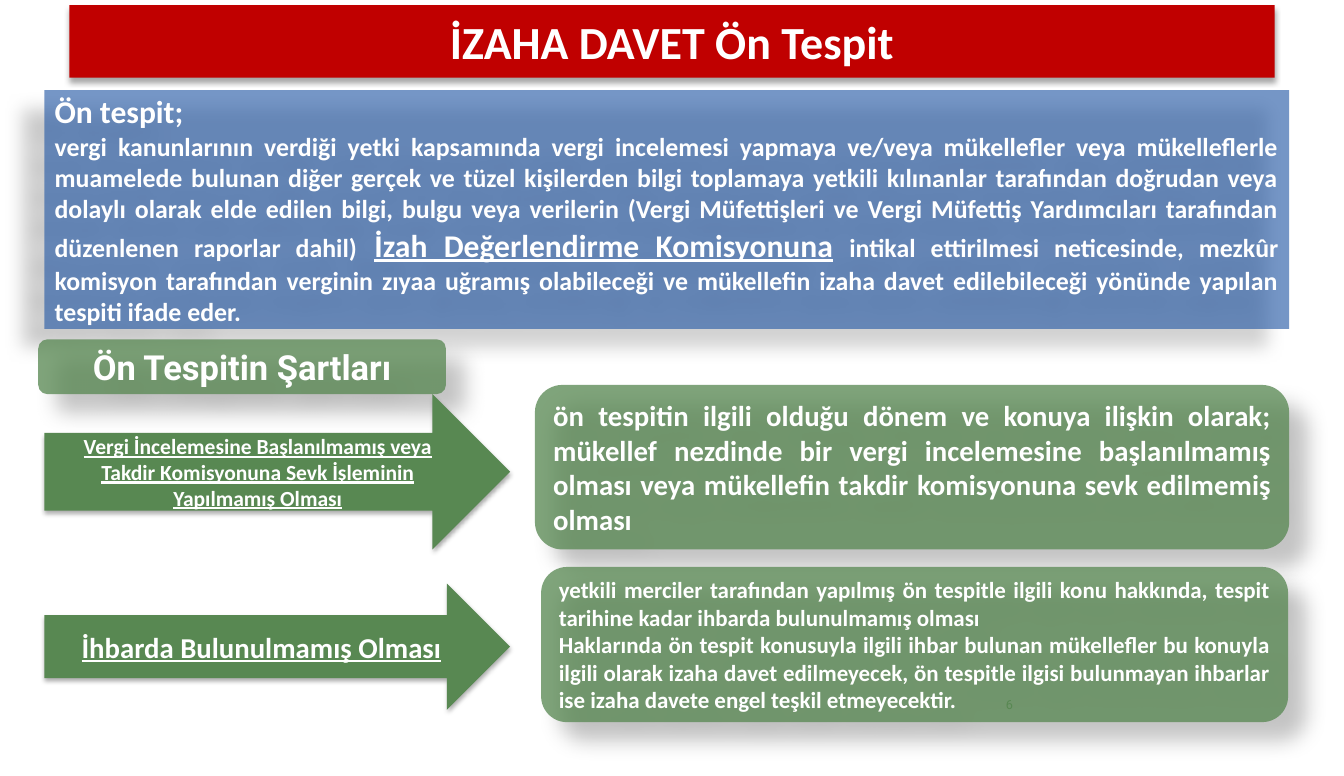
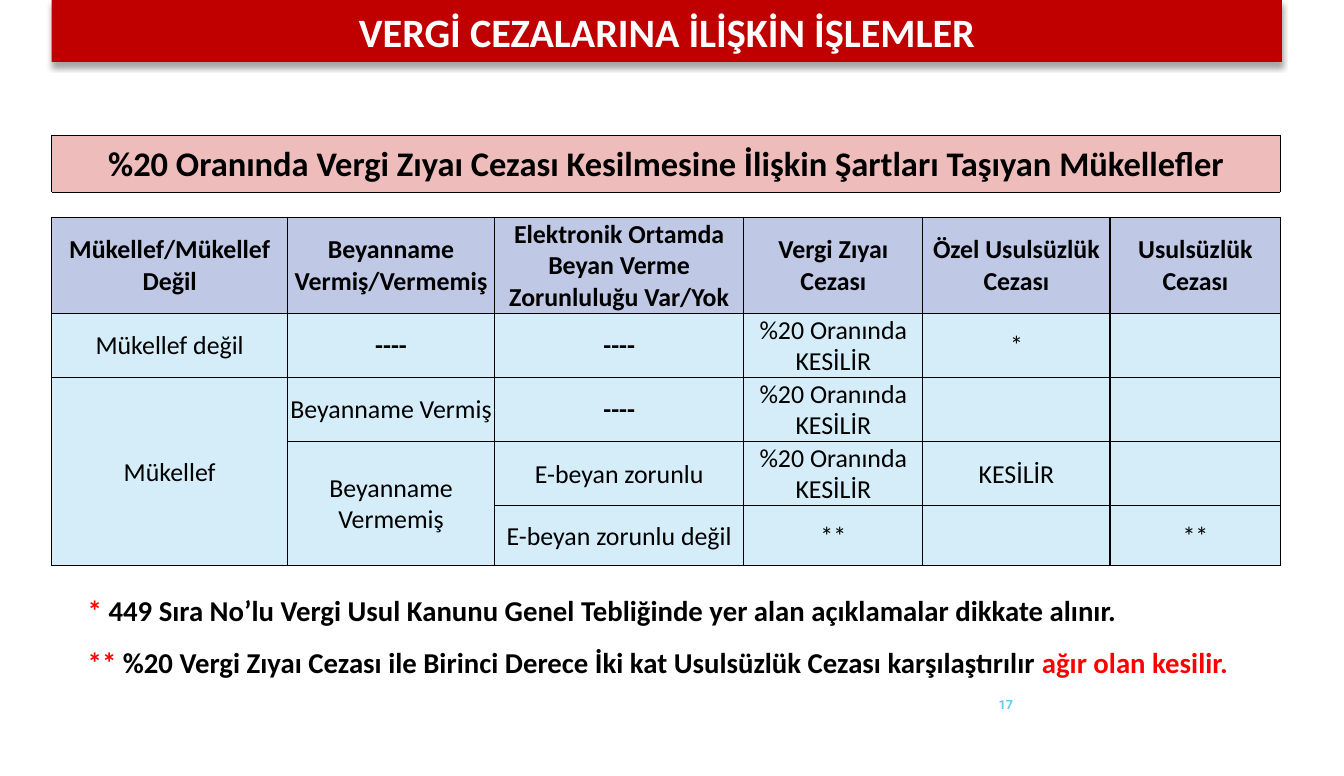
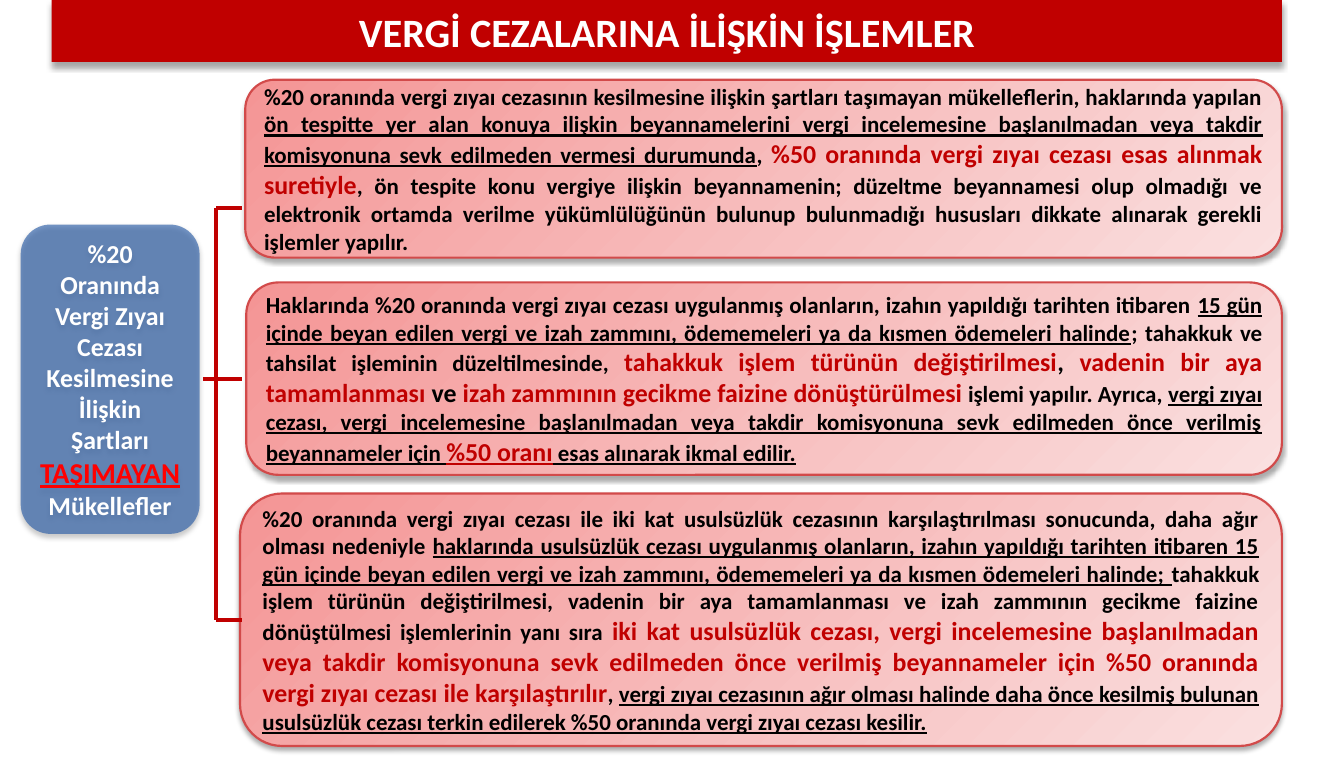
from dataclasses import dataclass

from lxml.etree import SubElement
from pptx import Presentation
from pptx.dml.color import RGBColor
from pptx.enum.shapes import MSO_CONNECTOR, MSO_SHAPE
from pptx.enum.text import MSO_ANCHOR, PP_ALIGN
from pptx.oxml import parse_xml
from pptx.oxml.ns import nsdecls, qn
from pptx.util import Inches, Pt


@dataclass(frozen=True)
class Theme:
    font: str = "Calibri"
    alternate_font: str = "Roboto"
    white: str = "FFFFFF"
    black: str = "000000"
    band: str = "C00000"
    alert: str = "FF0000"
    blue: str = "265AA6"
    green: str = "588852"
    sky: str = "5FCBEF"
    pink_dark: str = "F49595"
    pink_light: str = "FAE0E0"
    pink_line: str = "D24A4A"
    caption_fill: str = "EFBCBC"
    header_fill: str = "BFC8E4"
    body_fill: str = "D4EDF9"
    title: int = 32
    subtitle: int = 28
    heading: int = 24
    lead: int = 22
    large: int = 20
    body: int = 18
    small: int = 16
    label: int = 15
    tiny: int = 8
    number: float = 8.8


THEME = Theme()
CELL = 0.1  # one grid column or row, in inches
COLUMNS, ROWS = 129.9, 75

# Shadows: opacity %, blur pt, distance pt, direction in degrees
BAND_SHADOW = (35, 4, 3, 90)
SOFT_SHADOW = (32, 3.5, 2.2, 90)
BLUE_SHADOW = (28, 11.8, 19.7, 141)
GREEN_SHADOW = (30, 15, 18, 45)

UNDERLINED = dict(underline=True)
STRONG = dict(size=THEME.body, color=THEME.band)
RED = dict(color=THEME.alert)

# Content: a paragraph is a string or a list of strings and (string, format) pairs
PENALTY_TITLE = "VERGİ CEZALARINA İLİŞKİN İŞLEMLER"

DEFINITION = [
    [("Ön tespit;", dict(size=THEME.lead))],
    [
        "vergi kanunlarının verdiği yetki kapsamında vergi incelemesi yapmaya ve/veya mükellefler veya "
        "mükelleflerle muamelede bulunan diğer gerçek ve tüzel kişilerden bilgi toplamaya yetkili kılınanlar "
        "tarafından doğrudan veya dolaylı olarak elde edilen bilgi, bulgu veya verilerin (Vergi Müfettişleri ve "
        "Vergi Müfettiş Yardımcıları tarafından düzenlenen raporlar dahil)",
        (" ", dict(size=THEME.heading)),
        ("İzah Değerlendirme Komisyonuna", dict(size=THEME.lead, underline=True)),
        (" ", dict(size=THEME.lead)),
        "intikal ettirilmesi neticesinde, mezkûr komisyon tarafından verginin zıyaa uğramış olabileceği ve "
        "mükellefin izaha davet edilebileceği yönünde yapılan tespiti ifade eder.",
    ],
]

# Each condition: arrow place, arrow size, arrow text, box place, box size, box text
CONDITIONS = [
    ((4.3, 38.1, 45, 15), THEME.label,
     "Vergi İncelemesine Başlanılmamış veya Takdir Komisyonuna Sevk İşleminin Yapılmamış Olması",
     (51.7, 37.2, 72.9, 15.9), THEME.large,
     ["ön tespitin ilgili olduğu dönem ve konuya ilişkin olarak; mükellef nezdinde bir vergi incelemesine "
      "başlanılmamış olması veya mükellefin takdir komisyonuna sevk edilmemiş olması"]),
    ((4.3, 56.4, 45, 12.2), THEME.large, "İhbarda Bulunulmamış Olması",
     (52.3, 54.8, 72.2, 15), THEME.small,
     ["yetkili merciler tarafından yapılmış ön tespitle ilgili konu hakkında, tespit tarihine kadar ihbarda "
      "bulunulmamış olması",
      "Haklarında ön tespit konusuyla ilgili ihbar bulunan mükellefler bu konuyla ilgili olarak izaha davet "
      "edilmeyecek, ön tespitle ilgisi bulunmayan ihbarlar ise izaha davete engel teşkil etmeyecektir."]),
]

TABLE_PLACE = (5, 13.1)
TABLE_COLUMNS = [22.8, 20, 24.1, 17.3, 18.1, 16.5]
TABLE_ROWS = [5.5, 2.4, 9.3, 6.2, 6.2, 6.2, 5.8]
CAPTION_ROW, SPACER_ROW, HEADER_ROW = 0, 1, 2
RATE = "%20 Oranında\nKESİLİR"
TABLE = [
    ["%20 Oranında Vergi Zıyaı Cezası Kesilmesine İlişkin Şartları Taşıyan Mükellefler", "", "", "", "", ""],
    [""] * 6,
    ["Mükellef/Mükellef Değil", "Beyanname Vermiş/Vermemiş",
     "Elektronik Ortamda\nBeyan Verme Zorunluluğu Var/Yok", "Vergi Zıyaı Cezası",
     "Özel Usulsüzlük Cezası", "Usulsüzlük Cezası"],
    ["Mükellef değil", "----", "----", RATE, "*", ""],
    ["Mükellef", "Beyanname Vermiş", "----", RATE, "", ""],
    ["", "Beyanname Vermemiş", "E-beyan zorunlu", RATE, "KESİLİR", ""],
    ["", "", "E-beyan zorunlu değil", "**", "", "**"],
]
MERGES = [((0, 0), (0, 5)), ((1, 0), (1, 5)), ((4, 0), (6, 0)), ((5, 1), (6, 1))]

FOOTNOTES = [
    [("* ", RED), "449 Sıra No’lu Vergi Usul Kanunu Genel Tebliğinde yer alan açıklamalar dikkate alınır."],
    [("** ", RED), "%20 Vergi Zıyaı Cezası ile Birinci Derece İki kat Usulsüzlük Cezası karşılaştırılır ",
     ("ağır olan kesilir.", RED)],
]

SUBJECT = [[
    "%20 Oranında Vergi Zıyaı Cezası Kesilmesine İlişkin Şartları ",
    ("TAŞIMAYAN", dict(size=THEME.large, color=THEME.alert, underline=True)),
    " Mükellefler",
]]

# Each outcome: left, top, height, runs; all end at the same right edge
OUTCOME_RIGHT = 123.9
OUTCOMES = [
    (23.7, 7.7, 17.2, [
        "%20 oranında vergi zıyaı cezasının kesilmesine ilişkin şartları taşımayan mükelleflerin, haklarında "
        "yapılan ",
        ("ön tespitte yer alan konuya ilişkin beyannamelerini vergi incelemesine başlanılmadan veya takdir "
         "komisyonuna sevk edilmeden vermesi durumunda", UNDERLINED),
        ", ",
        ("%50 oranında vergi zıyaı cezası esas alınmak suretiyle", STRONG),
        ", ön tespite konu vergiye ilişkin beyannamenin; düzeltme beyannamesi olup olmadığı ve elektronik "
        "ortamda verilme yükümlülüğünün bulunup bulunmadığı hususları dikkate alınarak gerekli işlemler yapılır.",
    ]),
    (23.8, 27.3, 18.6, [
        "Haklarında %20 oranında vergi zıyaı cezası uygulanmış olanların, izahın yapıldığı tarihten itibaren ",
        ("15 gün içinde beyan edilen vergi ve izah zammını, ödememeleri ya da kısmen ödemeleri halinde",
         UNDERLINED),
        "; tahakkuk ve tahsilat işleminin düzeltilmesinde, ",
        ("tahakkuk işlem türünün değiştirilmesi", STRONG),
        (", ", dict(size=THEME.body)),
        ("vadenin bir aya tamamlanması ", STRONG),
        ("ve ", dict(size=THEME.body)),
        ("izah zammının gecikme faizine dönüştürülmesi", STRONG),
        " işlemi yapılır. Ayrıca, ",
        ("vergi zıyaı cezası, vergi incelemesine başlanılmadan veya takdir komisyonuna sevk edilmeden önce "
         "verilmiş beyannameler için ", UNDERLINED),
        ("%50 oranı", dict(STRONG, underline=True)),
        (" esas alınarak ikmal edilir.", UNDERLINED),
    ]),
    (23.2, 47.7, 24.4, [
        "%20 oranında vergi zıyaı cezası ile iki kat usulsüzlük cezasının karşılaştırılması sonucunda, daha "
        "ağır olması nedeniyle ",
        ("haklarında usulsüzlük cezası uygulanmış olanların, izahın yapıldığı tarihten itibaren 15 gün içinde "
         "beyan edilen vergi ve izah zammını, ödememeleri ya da kısmen ödemeleri halinde; ", UNDERLINED),
        "tahakkuk işlem türünün değiştirilmesi, vadenin bir aya tamamlanması ve izah zammının gecikme faizine "
        "dönüştülmesi işlemlerinin yanı sıra ",
        ("iki kat usulsüzlük cezası, vergi incelemesine başlanılmadan veya takdir komisyonuna sevk edilmeden "
         "önce verilmiş beyannameler için %50 oranında vergi zıyaı cezası ile karşılaştırılır", STRONG),
        ", ",
        ("vergi zıyaı cezasının ağır olması halinde daha önce kesilmiş bulunan usulsüzlük cezası terkin "
         "edilerek %50 oranında vergi zıyaı cezası kesilir.", UNDERLINED),
    ]),
]
STEM_LEFT, TRUNK, BRANCH_RIGHT = 19.6, 20.9, 23.4
BRANCH_ROWS = [20.1, 36.6, 59.9]


def grid(*values):
    return [Inches(value * CELL) for value in values]


def write(frame, paragraphs, size=THEME.body, color=THEME.white, font=THEME.font, bold=True,
          underline=False, align=PP_ALIGN.CENTER, gap=0):
    """Fill a text frame; a run's own format overrides the keyword arguments."""
    base = dict(size=size, color=color, font=font, bold=bold, underline=underline)
    frame.word_wrap = True
    for index, content in enumerate(paragraphs):
        paragraph = frame.paragraphs[0] if index == 0 else frame.add_paragraph()
        paragraph.alignment = align
        paragraph.space_before = Pt(gap if index else 0)
        for item in [content] if isinstance(content, str) else content:
            text, changes = (item, {}) if isinstance(item, str) else item
            style = {**base, **changes}
            for number, line in enumerate(text.split("\n")):
                if number:
                    paragraph.add_line_break()
                run = paragraph.add_run()
                run.text = line
                run.font.size = Pt(style["size"])
                run.font.name = style["font"]
                run.font.bold = style["bold"]
                run.font.underline = style["underline"]
                run.font.color.rgb = RGBColor.from_string(style["color"])


def add_shadow(shape, opacity, blur, distance, direction):
    shape.shadow.inherit = False
    effects = shape._element.spPr.find(qn("a:effectLst"))
    effects.append(parse_xml(
        f'<a:outerShdw {nsdecls("a")} blurRad="{Pt(blur)}" dist="{Pt(distance)}" dir="{direction * 60000}" '
        f'algn="ctr" rotWithShape="0"><a:srgbClr val="{THEME.black}">'
        f'<a:alpha val="{opacity * 1000}"/></a:srgbClr></a:outerShdw>'))


def add_box(slide, place, paragraphs, kind=MSO_SHAPE.ROUNDED_RECTANGLE, fill=THEME.green, opacity=100,
            shadow=SOFT_SHADOW, line=None, **text_format):
    """Add a shape with text; a pair of fills makes a diagonal gradient."""
    shape = slide.shapes.add_shape(kind, *grid(*place))
    if isinstance(fill, tuple):
        shape.fill.gradient()
        shape.fill.gradient_angle = 315
        for stop, color in zip(shape.fill.gradient_stops, fill):
            stop.color.rgb = RGBColor.from_string(color)
    else:
        shape.fill.solid()
        shape.fill.fore_color.rgb = RGBColor.from_string(fill)
    if opacity < 100:
        color_element = shape._element.spPr.find(qn("a:solidFill"))[0]
        SubElement(color_element, qn("a:alpha"), val=str(opacity * 1000))
    if line:
        shape.line.color.rgb = RGBColor.from_string(line)
        shape.line.width = Pt(1.5)
    else:
        shape.line.fill.background()
    add_shadow(shape, *shadow)
    shape.text_frame.vertical_anchor = MSO_ANCHOR.MIDDLE
    write(shape.text_frame, paragraphs, **text_format)
    return shape


def add_text(slide, place, paragraphs, **text_format):
    frame = slide.shapes.add_textbox(*grid(*place)).text_frame
    frame.vertical_anchor = MSO_ANCHOR.MIDDLE
    write(frame, paragraphs, **text_format)


def add_title(slide, text, place=(5, 0, 118.9, 6), size=THEME.subtitle):
    add_box(slide, place, [text], kind=MSO_SHAPE.RECTANGLE, fill=THEME.band, shadow=BAND_SHADOW, size=size)


def add_number(slide, text, color, bold):
    add_text(slide, (91.6, 66.1, 7.3, 4), [text], size=THEME.number, color=color,
             font=THEME.alternate_font, bold=bold, align=PP_ALIGN.RIGHT)


def add_line(slide, *ends):
    connector = slide.shapes.add_connector(MSO_CONNECTOR.STRAIGHT, *grid(*ends))
    connector.line.color.rgb = RGBColor.from_string(THEME.band)
    connector.line.width = Pt(3)
    SubElement(connector._element.spPr, qn("a:effectLst"))


def set_borders(cell, sides):
    properties = cell._tc.get_or_add_tcPr()
    for index, side in enumerate(sides):
        properties.insert(index, parse_xml(
            f'<a:ln{side} {nsdecls("a")} w="{Pt(1)}"><a:solidFill><a:srgbClr val="{THEME.black}"/>'
            f'</a:solidFill></a:ln{side}>'))


def add_penalty_table(slide):
    place = grid(*TABLE_PLACE, sum(TABLE_COLUMNS), sum(TABLE_ROWS))
    table = slide.shapes.add_table(len(TABLE_ROWS), len(TABLE_COLUMNS), *place).table
    table.first_row = table.horz_banding = False
    for column, width in zip(table.columns, grid(*TABLE_COLUMNS)):
        column.width = width
    for row, height in zip(table.rows, grid(*TABLE_ROWS)):
        row.height = height
    fills = {CAPTION_ROW: THEME.caption_fill, SPACER_ROW: THEME.white, HEADER_ROW: THEME.header_fill}
    for row_index, texts in enumerate(TABLE):
        for column_index, text in enumerate(texts):
            cell = table.cell(row_index, column_index)
            cell.margin_left = cell.margin_right = cell.margin_top = Inches(0.01)
            cell.margin_bottom = 0
            cell.vertical_anchor = MSO_ANCHOR.MIDDLE
            cell.fill.solid()
            cell.fill.fore_color.rgb = RGBColor.from_string(fills.get(row_index, THEME.body_fill))
            set_borders(cell, "TB" if row_index == SPACER_ROW else "LRTB")
            if text:
                write(cell.text_frame, [text], color=THEME.black,
                      size=THEME.heading if row_index == CAPTION_ROW else THEME.body,
                      bold=row_index <= HEADER_ROW or text == "----")
            else:
                SubElement(cell.text_frame.paragraphs[0]._p, qn("a:endParaRPr"), sz=str(THEME.tiny * 100))
    for first, last in MERGES:
        table.cell(*first).merge(table.cell(*last))


def build_conditions(slide):
    add_title(slide, "İZAHA DAVET Ön Tespit", place=(6.7, 0.5, 116.5, 7), size=THEME.title)
    add_box(slide, (4.3, 8.7, 120.3, 23.1), DEFINITION, kind=MSO_SHAPE.RECTANGLE, fill=THEME.blue,
            opacity=63, shadow=BLUE_SHADOW, align=PP_ALIGN.JUSTIFY)
    add_box(slide, (3.7, 32.8, 39.4, 5.3), ["Ön Tespitin Şartları"], opacity=76, shadow=GREEN_SHADOW,
            size=THEME.heading, font=THEME.alternate_font)
    for arrow_place, arrow_size, condition, box_place, box_size, details in CONDITIONS:
        add_box(slide, arrow_place, [condition], kind=MSO_SHAPE.RIGHT_ARROW, size=arrow_size, underline=True)
        add_box(slide, box_place, details, opacity=76, shadow=GREEN_SHADOW, size=box_size,
                align=PP_ALIGN.JUSTIFY)
    add_number(slide, "6", THEME.green, bold=False)


def build_penalty_table(slide):
    add_number(slide, "17", THEME.sky, bold=True)
    add_penalty_table(slide)
    add_text(slide, (7.5, 55.6, 117.3, 11.8), FOOTNOTES, size=THEME.large, color=THEME.black,
             align=PP_ALIGN.LEFT, gap=12)
    add_title(slide, PENALTY_TITLE)


def build_outcomes(slide):
    add_title(slide, PENALTY_TITLE)
    subject = add_box(slide, (2, 21.7, 17.3, 29.9), SUBJECT, fill=THEME.blue, opacity=63)
    subject.text_frame.margin_left = subject.text_frame.margin_right = Inches(0.08)
    for left, top, height, runs in OUTCOMES:
        add_box(slide, (left, top, OUTCOME_RIGHT - left, height), [runs],
                fill=(THEME.pink_dark, THEME.pink_light), line=THEME.pink_line, size=THEME.small,
                color=THEME.black, align=PP_ALIGN.JUSTIFY)
    # Bracket from the subject to the outcomes
    add_line(slide, TRUNK, BRANCH_ROWS[0], TRUNK, BRANCH_ROWS[-1])
    add_line(slide, STEM_LEFT, BRANCH_ROWS[1], TRUNK, BRANCH_ROWS[1])
    for row in BRANCH_ROWS:
        add_line(slide, TRUNK, row, BRANCH_RIGHT, row)


def main():
    presentation = Presentation()
    presentation.slide_width, presentation.slide_height = grid(COLUMNS, ROWS)
    blank_layout = presentation.slide_layouts[6]
    for build in (build_conditions, build_penalty_table, build_outcomes):
        build(presentation.slides.add_slide(blank_layout))
    presentation.save("out.pptx")


if __name__ == "__main__":
    main()
